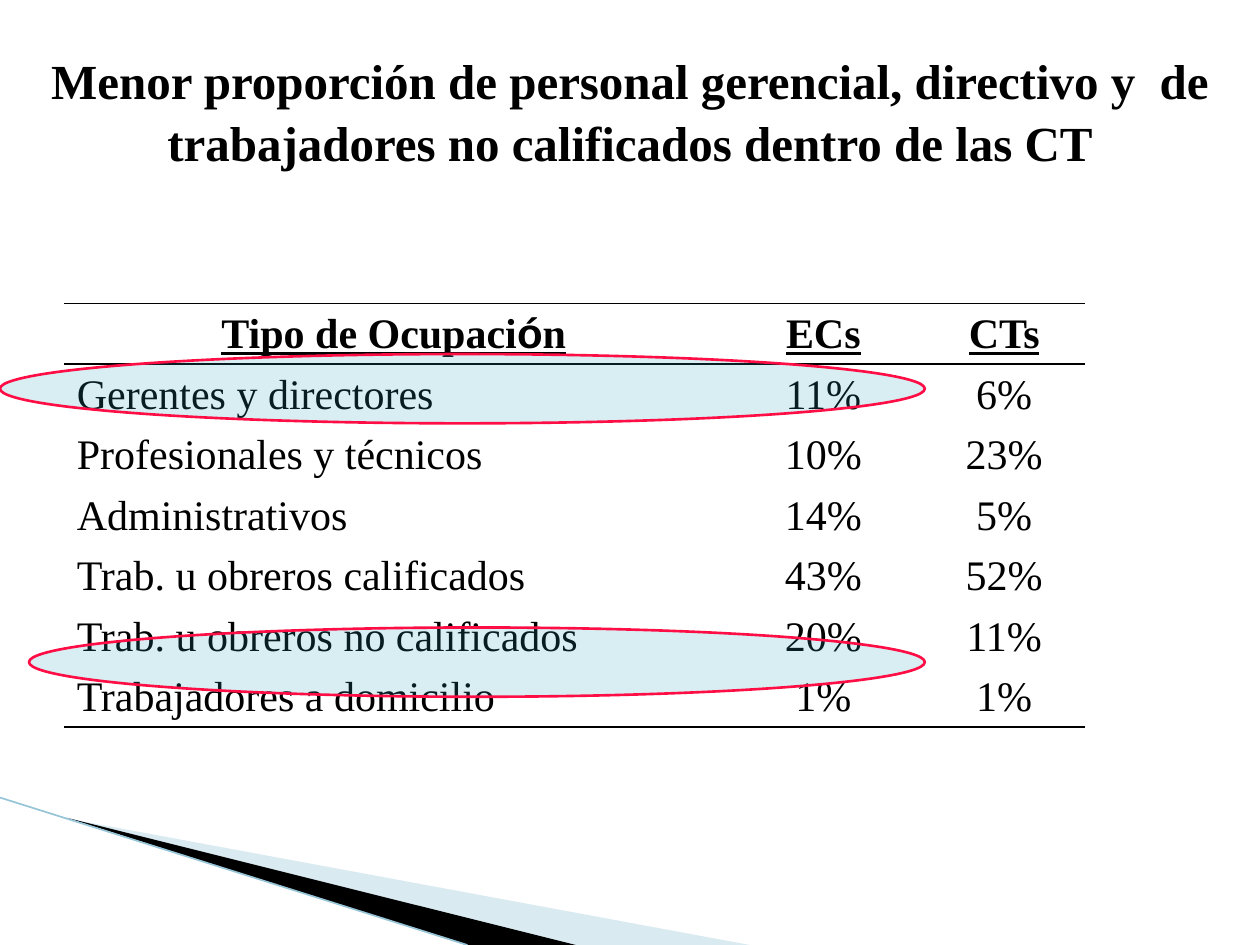
from lxml import etree
from pptx import Presentation
from pptx.dml.color import RGBColor
from pptx.enum.shapes import MSO_CONNECTOR, MSO_SHAPE
from pptx.enum.text import MSO_ANCHOR, PP_ALIGN
from pptx.oxml.ns import qn
from pptx.util import Inches, Pt

LEFT, CENTER = PP_ALIGN.LEFT, PP_ALIGN.CENTER
MIDDLE, BOTTOM = MSO_ANCHOR.MIDDLE, MSO_ANCHOR.BOTTOM
OVAL, STRAIGHT = MSO_SHAPE.OVAL, MSO_CONNECTOR.STRAIGHT

SERIF, SANS = "Times New Roman", "Arial"
BLACK, TEAL, PINK, PALE, SKY = "000000", "2DA2BF", "FF0E46", "A0CBDC", "97C5D8"

TITLE = ("Menor proporción de personal gerencial, directivo y  de "
         "trabajadores no calificados dentro de las CT")
ROWS = [
    ("Tipo de Ocupación", "ECs", "CTs"),
    ("Gerentes y directores", "11%", "6%"),
    ("Profesionales y técnicos", "10%", "23%"),
    ("Administrativos", "14%", "5%"),
    ("Trab. u obreros calificados", "43%", "52%"),
    ("Trab. u obreros no calificados", "20%", "11%"),
    ("Trabajadores a domicilio", "1%", "1%"),
]
COLS = (5.23, 1.59, 1.28)
ROW_H = 0.48
RULED = {0: ("T", "B"), 1: ("T",), len(ROWS) - 1: ("B",)}
OVALS = [(0, 2.81), (0.23, 4.98)]
OVAL_END, OVAL_H = 7.34, 0.55
WEDGES = [
    ([(0.55, 6.5), (5.95, 7.5), (4.56, 7.5)], PALE, 40),
    ([(0.53, 6.49), (4.57, 7.5), (3.7, 7.5)], BLACK, 100),
]


def rgb(code):
    return RGBColor.from_string(code)


def paint(shape, color, alpha=100):
    """Fill a shape, with alpha as percent of opacity."""
    shape.shadow.inherit = False
    shape.fill.solid()
    shape.fill.fore_color.rgb = rgb(color)
    if alpha < 100:
        tint = shape.fill._xPr.find(qn("a:solidFill"))[0]
        etree.SubElement(tint, qn("a:alpha"), val=str(alpha * 1000))


def write(frame, text, size=24, bold=False, under=False, align=CENTER, odd=""):
    """Write one paragraph; letters found in odd are set in the sans font."""
    par = frame.paragraphs[0]
    par.alignment = align
    parts = [text]
    if odd and odd in text:
        head, tail = text.split(odd)
        parts = [head, odd, tail]
    for part in parts:
        run = par.add_run()
        run.text = part
        font = run.font
        font.name = SANS if part == odd else SERIF
        font.size, font.bold, font.underline = Pt(size), bold, under
        font.color.rgb = rgb(BLACK)
    return par


def rule(cell, sides):
    """Draw black borders on the given sides and none on the others."""
    props = cell._tc.get_or_add_tcPr()
    for side in "LRTB":
        line = etree.SubElement(props, qn("a:ln" + side), w=str(Pt(1)))
        if side in sides:
            fill = etree.SubElement(line, qn("a:solidFill"))
            etree.SubElement(fill, qn("a:srgbClr"), val=BLACK)
        else:
            etree.SubElement(line, qn("a:noFill"))


def add_decor(shapes):
    for points, color, alpha in WEDGES:
        spots = [(Inches(x), Inches(y)) for x, y in points]
        path = shapes.build_freeform(*spots[0])
        path.add_line_segments(spots[1:], close=True)
        wedge = path.convert_to_shape()
        paint(wedge, color, alpha)
        wedge.line.fill.background()
    edge = shapes.add_connector(STRAIGHT, Inches(0), Inches(6.33),
                                Inches(3.71), Inches(7.5))
    edge.line.color.rgb = rgb(SKY)
    edge.line.width = Pt(0.95)
    etree.SubElement(edge._element.spPr, qn("a:effectLst"))


def add_title(title):
    title.left, title.top = Inches(0), Inches(0.4)
    title.width, title.height = Inches(10), Inches(0.94)
    frame = title.text_frame
    frame.word_wrap = True
    frame.vertical_anchor = MIDDLE
    write(frame, TITLE, size=28, bold=True).line_spacing = 1.05


def add_grid(shapes):
    grid = shapes.add_table(len(ROWS), len(COLS), Inches(0.51), Inches(2.41),
                            Inches(sum(COLS)), Inches(ROW_H * len(ROWS))).table
    grid.first_row = grid.horz_banding = False
    for col, width in zip(grid.columns, COLS):
        col.width = Inches(width)
    for r, row in enumerate(ROWS):
        for c, text in enumerate(row):
            cell, head = grid.cell(r, c), r == 0
            rule(cell, RULED.get(r, ()))
            cell.fill.background()
            cell.vertical_anchor = BOTTOM
            write(cell.text_frame, text, bold=head, under=head,
                  align=CENTER if head or c else LEFT, odd="ó" if head else "")


def add_ovals(shapes):
    for x, y in OVALS:
        oval = shapes.add_shape(OVAL, Inches(x), Inches(y),
                                Inches(OVAL_END - x), Inches(OVAL_H))
        paint(oval, TEAL, 18)
        oval.line.color.rgb = rgb(PINK)
        oval.line.width = Pt(1.5)


def main():
    deck = Presentation()
    deck.slide_width, deck.slide_height = Inches(10), Inches(7.5)
    shapes = deck.slides.add_slide(deck.slide_layouts[5]).shapes
    add_title(shapes.title)
    add_decor(shapes)
    add_grid(shapes)
    add_ovals(shapes)
    deck.save("out.pptx")


if __name__ == "__main__":
    main()
